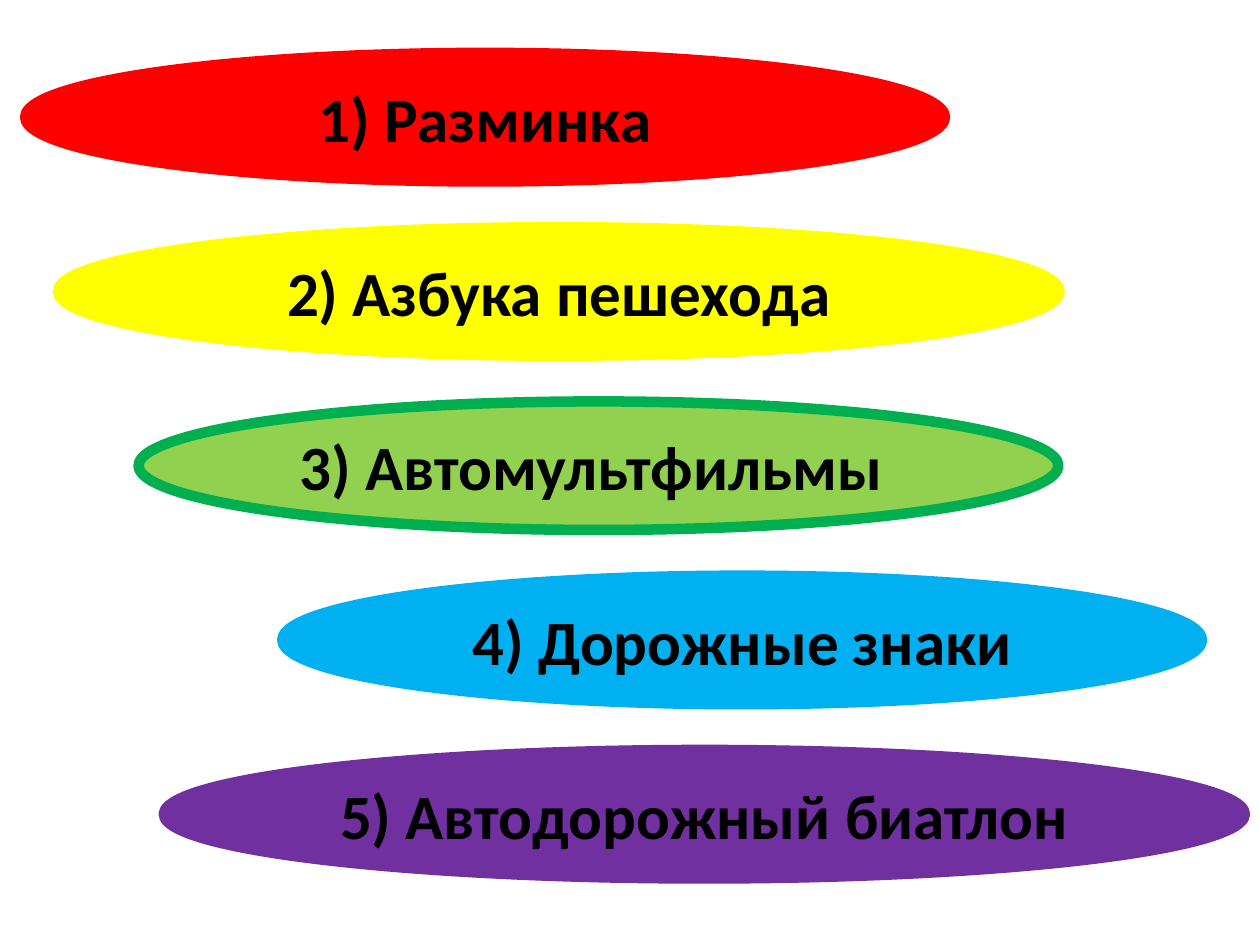
from pptx import Presentation
from pptx.dml.color import RGBColor
from pptx.enum.shapes import MSO_SHAPE as Shape
from pptx.enum.text import MSO_ANCHOR as Anchor, PP_ALIGN as Align
from pptx.util import Inches, Pt

BLACK = RGBColor(0x00, 0x00, 0x00)
RED = RGBColor(0xFF, 0x00, 0x00)
YELLOW = RGBColor(0xFF, 0xFF, 0x00)
LIME = RGBColor(0x92, 0xD0, 0x50)
GREEN = RGBColor(0x00, 0xB0, 0x50)
BLUE = RGBColor(0x00, 0xB0, 0xF0)
PURPLE = RGBColor(0x70, 0x30, 0xA0)

prs = Presentation()
prs.slide_width, prs.slide_height = Inches(10), Inches(7.5)
slide = prs.slides.add_slide(prs.slide_layouts[6])

# Contest rounds: text, left, width, fill, line
rounds = [
    ("1) Разминка", 0.2, 7.3, RED, RED),
    ("2) Азбука пешехода", 0.46, 7.95, YELLOW, YELLOW),
    ("3) Автомультфильмы ", 1.1, 7.3, LIME, GREEN),
    ("4) Дорожные знаки", 2.24, 7.3, BLUE, BLUE),
    ("5) Автодорожный биатлон", 1.3, 8.58, PURPLE, PURPLE),
]
TOP, STEP, HEIGHT = 0.42, 1.383, 1.02

# Evenly spaced ovals, one for each round
for i, (text, left, width, fill, line) in enumerate(rounds):
    oval = slide.shapes.add_shape(
        Shape.OVAL, Inches(left), Inches(TOP + i * STEP), Inches(width), Inches(HEIGHT))
    oval.shadow.inherit = False
    oval.fill.solid()
    oval.fill.fore_color.rgb = fill
    oval.line.color.rgb = line
    oval.line.width = Pt(6)

    # Label
    frame = oval.text_frame
    frame.text = text
    frame.word_wrap = True
    frame.vertical_anchor = Anchor.MIDDLE
    para = frame.paragraphs[0]
    para.alignment = Align.CENTER
    font = para.runs[0].font
    font.name = "Calibri"
    font.size = Pt(36)
    font.bold = True
    font.color.rgb = BLACK

prs.save("out.pptx")
